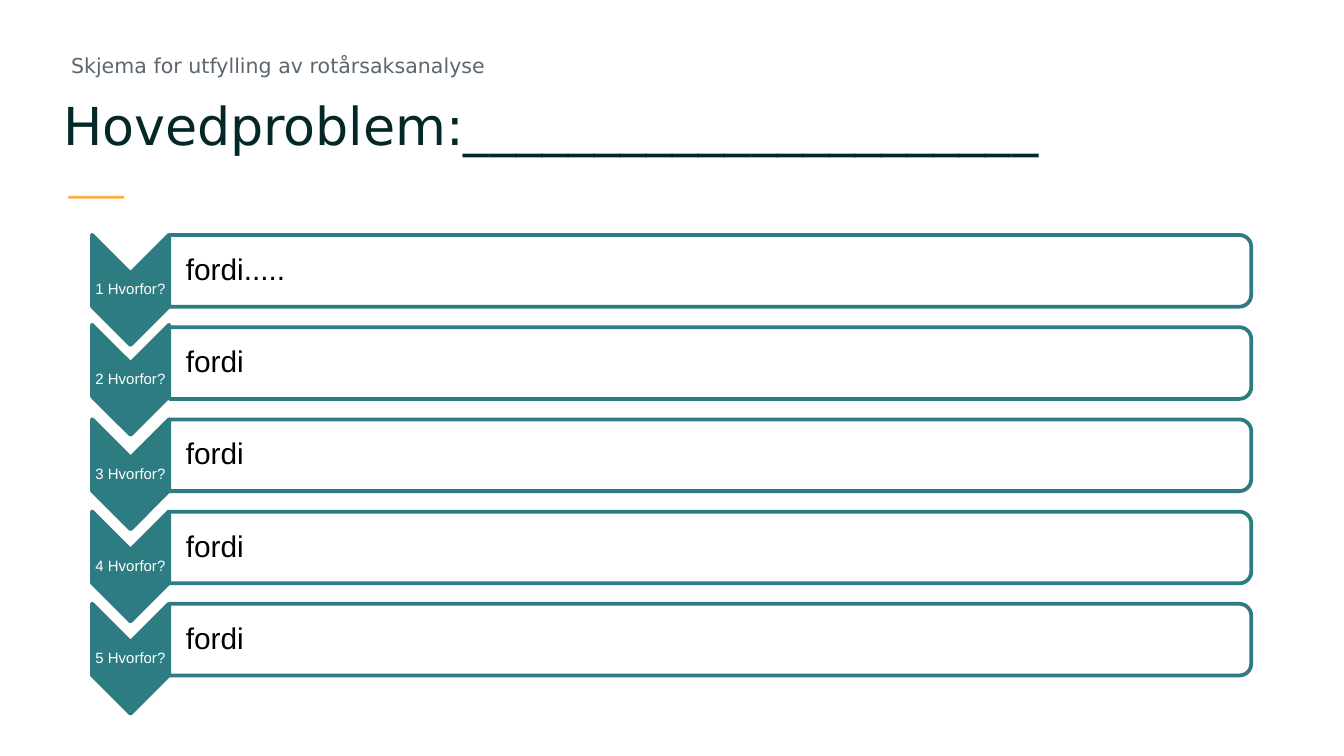
from lxml.etree import SubElement
from pptx import Presentation
from pptx.dml.color import RGBColor
from pptx.enum.shapes import MSO_SHAPE
from pptx.enum.text import MSO_ANCHOR, MSO_AUTO_SIZE, PP_ALIGN
from pptx.oxml.ns import qn
from pptx.util import Pt

TITLE = "Hovedproblem:" + "_" * 22
LEAD = "Skjema for utfylling av rotårsaksanalyse"
ROWS = [
    ("1 Hvorfor?", "fordi.....", 0),
    ("2 Hvorfor?", "fordi", -1.2),
    ("3 Hvorfor?", "fordi", 0),
    ("4 Hvorfor?", "fordi", 0),
    ("5 Hvorfor?", "fordi", 0),
]
TEAL, WHITE, GOLD = "2D7C81", "FFFFFF", "FFAB40"
STEP = 49.4
ARROW_X, ARROW_Y, ARROW_W, ARROW_H = 69.9, 155.3, 59, 41.2
BAR_X, BAR_Y, BAR_W, BAR_H = 380.5, 145.1, 579.6, 38.4


def paint(fmt, tint):
    fmt.solid()
    fmt.fore_color.rgb = RGBColor.from_string(tint)


def place(shape, left, top, width, height):
    shape.left, shape.top = Pt(left), Pt(top)
    shape.width, shape.height = Pt(width), Pt(height)


def write(shape, text, size, font, tint, pads, anchor, space=0.9, align=PP_ALIGN.LEFT):
    frame = shape.text_frame
    frame.word_wrap = True
    frame.auto_size = MSO_AUTO_SIZE.NONE
    frame.vertical_anchor = anchor
    (frame.margin_left, frame.margin_top,
     frame.margin_right, frame.margin_bottom) = map(Pt, pads)
    para = frame.paragraphs[0]
    para.alignment, para.line_spacing = align, space
    run = para.add_run()
    run.text = text
    run.font.size, run.font.name = Pt(size), font
    paint(run.font.fill, tint)


def turned(slide, kind, mid_x, mid_y, width, height, tint):
    shape = slide.shapes.add_shape(
        kind, Pt(mid_x - width / 2), Pt(mid_y - height / 2), Pt(width), Pt(height))
    shape.rotation = 90
    shape.shadow.inherit = False
    paint(shape.fill, tint)
    paint(shape.line.fill, TEAL)
    shape.line.width = Pt(2)
    return shape


def label(slide, left, top, width, height, *style, **more):
    box = slide.shapes.add_textbox(Pt(left), Pt(top), Pt(width), Pt(height))
    write(box, *style, **more)


def main():
    """Build the five-whys form and save it."""
    deck = Presentation()
    deck.slide_width, deck.slide_height = Pt(720), Pt(405)
    slide = deck.slides.add_slide(deck.slide_layouts[5])

    title = slide.shapes.title
    place(title, 26.6, 46.8, 664, 47.5)
    write(title, TITLE, 28, "DejaVu Sans", "042827", [7.2] * 4, MSO_ANCHOR.TOP)

    rule = slide.shapes.add_shape(
        MSO_SHAPE.RECTANGLE, Pt(36.7), Pt(105), Pt(30), Pt(1.5))
    rule.shadow.inherit = False
    paint(rule.fill, GOLD)
    rule.line.fill.background()

    for i, (why, cause, nudge) in enumerate(ROWS):
        mid = ARROW_Y + i * STEP + nudge
        turned(slide, MSO_SHAPE.CHEVRON, ARROW_X, mid, ARROW_W, ARROW_H, TEAL)
        label(slide, ARROW_X - ARROW_H / 2, mid - 9, ARROW_H, 18, why, 8, "Arial",
              WHITE, [0.4] * 4, MSO_ANCHOR.MIDDLE, align=PP_ALIGN.CENTER)

        mid = BAR_Y + i * STEP
        bar = turned(slide, MSO_SHAPE.ROUND_2_SAME_RECTANGLE,
                     BAR_X, mid, BAR_H, BAR_W, WHITE)
        tone = bar.fill._xPr.find(qn("a:solidFill"))[0]
        SubElement(tone, qn("a:alpha"), val="90000")
        label(slide, BAR_X - BAR_W / 2, mid - 17.3, 577.5, 34.6, cause, 16, "Arial",
              "000000", [8.9, 0.7, 0.7, 0.7], MSO_ANCHOR.MIDDLE)

    label(slide, 26.6, 7.2, 300, 41.8, LEAD, 11, "DejaVu Sans", "5B6670",
          [11.5, 7.2, 7.2, 7.2], MSO_ANCHOR.BOTTOM, space=1.5)
    deck.save("out.pptx")


if __name__ == "__main__":
    main()
